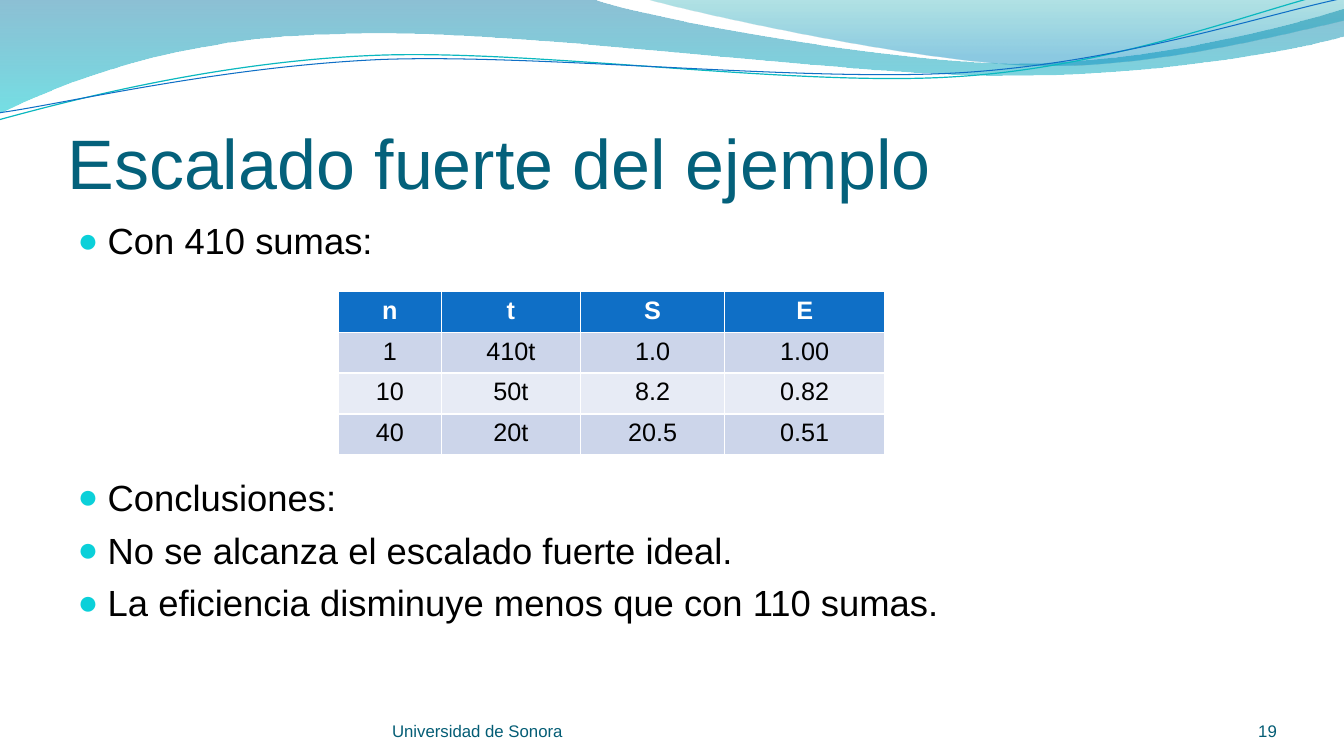
from lxml.etree import SubElement
from pptx import Presentation
from pptx.dml.color import RGBColor
from pptx.enum.text import MSO_ANCHOR as ANCHOR, MSO_AUTO_SIZE as AUTO, PP_ALIGN as ALIGN
from pptx.oxml.ns import qn
from pptx.util import Cm, Pt

FONT = "Arial"
BLACK = RGBColor(0x00, 0x00, 0x00)
WHITE = RGBColor(0xFF, 0xFF, 0xFF)
TITLE = RGBColor(0x04, 0x61, 0x7B)
FOOTER = RGBColor(0x04, 0x5D, 0x75)
BLUE = RGBColor(0x0F, 0x6F, 0xC6)
TEAL = RGBColor(0x0A, 0xB8, 0xBF)
BANDS = RGBColor(0xCC, 0xD5, 0xEA), RGBColor(0xE7, 0xEB, 0xF5)
BULLET = "0BD0D9"

BROAD_WAVE = (0, 0), [
    [(14.91, -0.03)],
    [(16.1, 0.43), (22.48, 1.6), (25.68, 1.6)],
    [(28.91, 1.6), (32.46, 0.66), (33.86, 0.23)],
    [(33.91, 0.91)],
    [(33.3, 1.12), (29.46, 1.93), (25.25, 1.91)],
    [(21.06, 1.91), (12.93, 0.71), (8.71, 0.86)],
    [(4.37, 0.91), (1.55, 2.11), (-0.03, 2.87)],
]
RIGHT_WAVE = (16.23, -0.03), [
    [(17.25, 0.28), (23.09, 1.57), (26.04, 1.65)],
    [(28.98, 1.75), (32.56, 0.81), (33.86, 0.53)],
    [(33.86, 0)],
]
TEAL_CURVE = (-0.03, 3.02), [
    [(1.63, 2.57), (5.36, 1.57), (9.37, 1.4)],
    [(13.39, 1.22), (20.07, 2.21), (24.13, 1.93)],
    [(28.19, 1.68), (31.8, 0.2), (33.81, -0.25)],
]
BLUE_CURVE = (0, 2.84), [
    [(1.6, 2.62), (5.54, 1.68), (9.6, 1.5)],
    [(13.64, 1.35), (20.22, 2.08), (24.26, 1.83)],
    [(28.32, 1.57), (31.88, 0.36), (33.88, -0.05)],
]
BROAD_STOPS = [(0, RGBColor(0x00, 0x74, 0xA1), 45), (1, RGBColor(0x00, 0xC6, 0xCF), 55)]
RIGHT_STOPS = [(0, RGBColor(0x00, 0xA1, 0xA9), 30), (0.8, RGBColor(0x00, 0x8B, 0xBF), 45)]
RESULTS = [
    ("n", "t", "S", "E"),
    ("1", "410t", "1.0", "1.00"),
    ("10", "50t", "8.2", "0.82"),
    ("40", "20t", "20.5", "0.51"),
]
POINTS = [
    ("Con 410 sumas:", 2.5),
    ("Conclusiones:", 152),
    ("No se alcanza el escalado fuerte ideal.", 6.5),
    ("La eficiencia disminuye menos que con 110 sumas.", 6.5),
]


class WaveSlide:
    """Adds styled elements to one slide, with lengths in centimetres."""

    def __init__(self, prs):
        self.slide = prs.slides.add_slide(prs.slide_layouts[1])
        self.shapes = self.slide.shapes

    def style(self, p, size, color, align=ALIGN.LEFT, bold=False):
        p.alignment = align
        for r in p.runs:
            r.font.name, r.font.size, r.font.bold = FONT, Pt(size), bold
            r.font.color.rgb = color

    def outline(self, start, segments, closed):
        builder = self.shapes.build_freeform(*map(Cm, start), scale=1.0)
        corners = [tuple(map(Cm, point)) for segment in segments for point in segment]
        builder.add_line_segments(corners, close=closed)
        sp = builder.convert_to_shape()
        sp.shadow.inherit = False
        lines = iter(list(sp.element.iter(qn("a:lnTo"))))
        for segment in segments:
            first, *others = [next(lines) for _ in segment]
            if others:
                cubic = SubElement(first.getparent(), qn("a:cubicBezTo"))
                first.addprevious(cubic)
                for line in (first, *others):
                    cubic.append(line[0])
                    line.getparent().remove(line)
        return sp

    def wave(self, path_points, stops):
        sp = self.outline(*path_points, closed=True)
        sp.line.fill.background()
        sp.fill.gradient()
        sp.fill.gradient_angle = 270
        for stop, (position, color, _) in zip(sp.fill.gradient_stops, stops):
            stop.position, stop.color.rgb = position, color
        for color, (_, _, opacity) in zip(sp.element.iter(qn("a:srgbClr")), stops):
            SubElement(color, qn("a:alpha"), val=str(opacity * 1000))

    def curve(self, path_points, color, width):
        sp = self.outline(*path_points, closed=False)
        sp.fill.background()
        sp.line.color.rgb, sp.line.width = color, Pt(width)

    def place(self, sp, left, top, width, height):
        sp.left, sp.top, sp.width, sp.height = map(Cm, (left, top, width, height))
        self.shapes.element.append(sp.element)
        sp.text_frame.auto_size = AUTO.NONE
        return sp.text_frame

    def title(self, text, *box):
        tf = self.place(self.shapes.title, *box)
        tf.text = text
        tf.vertical_anchor = ANCHOR.BOTTOM
        tf.margin_left = tf.margin_right = tf.margin_bottom = 0
        self.style(tf.paragraphs[0], 50, TITLE)

    def bullets(self, points, *box):
        tf = self.place(self.slide.placeholders[1], *box)
        tf.text = "\n".join(text for text, _ in points)
        tf.vertical_anchor = ANCHOR.TOP
        for p, (_, gap) in zip(tf.paragraphs, points):
            self.style(p, 26, BLACK)
            p.space_before = Pt(gap)
            pPr = p._p.get_or_add_pPr()
            pPr.set("marL", str(Cm(0.76)))
            pPr.set("indent", str(-Cm(0.76)))
            SubElement(SubElement(pPr, qn("a:buClr")), qn("a:srgbClr"), val=BULLET)
            SubElement(pPr, qn("a:buSzPct"), val="95000")
            SubElement(pPr, qn("a:buFont"), typeface=FONT)
            SubElement(pPr, qn("a:buChar"), char="●")

    def footer(self, text, left, width, align):
        sp = self.shapes.add_textbox(Cm(left), Cm(17.65), Cm(width), Cm(1.02))
        tf = sp.text_frame
        tf.word_wrap = True
        tf.vertical_anchor = ANCHOR.BOTTOM
        tf.margin_left = tf.margin_right = tf.margin_top = tf.margin_bottom = 0
        tf.text = text
        self.style(tf.paragraphs[0], 12, FOOTER, align)

    def table(self, rows, left, top, widths, row_height):
        size = Cm(sum(widths)), Cm(row_height * len(rows))
        table = self.shapes.add_table(len(rows), len(widths), Cm(left), Cm(top), *size).table
        for column, width in zip(table.columns, widths):
            column.width = Cm(width)
        for i, values in enumerate(rows):
            table.rows[i].height = Cm(row_height)
            header = i == 0
            for j, value in enumerate(values):
                cell = table.cell(i, j)
                cell.text = value
                cell.fill.solid()
                cell.fill.fore_color.rgb = BLUE if header else BANDS[(i - 1) % 2]
                color = WHITE if header else BLACK
                self.style(cell.text_frame.paragraphs[0], 18, color, ALIGN.CENTER, header)


def main():
    prs = Presentation()
    prs.slide_width, prs.slide_height = Cm(33.87), Cm(19.05)
    s = WaveSlide(prs)
    s.wave(BROAD_WAVE, BROAD_STOPS)
    s.wave(RIGHT_WAVE, RIGHT_STOPS)
    s.curve(TEAL_CURVE, TEAL, 0.85)
    s.curve(BLUE_CURVE, BLUE, 0.75)
    s.title("Escalado fuerte del ejemplo", 1.7, 1.96, 30.48, 3.18)
    s.bullets(POINTS, 1.7, 5.38, 30.48, 12.19)
    s.footer("Universidad de Sonora", 9.88, 12.42, ALIGN.LEFT)
    s.footer("19", 29.36, 2.82, ALIGN.RIGHT)
    s.table(RESULTS, 8.53, 7.34, [2.59, 3.51, 3.63, 4.04], 1.03)
    prs.save("out.pptx")


if __name__ == "__main__":
    main()
